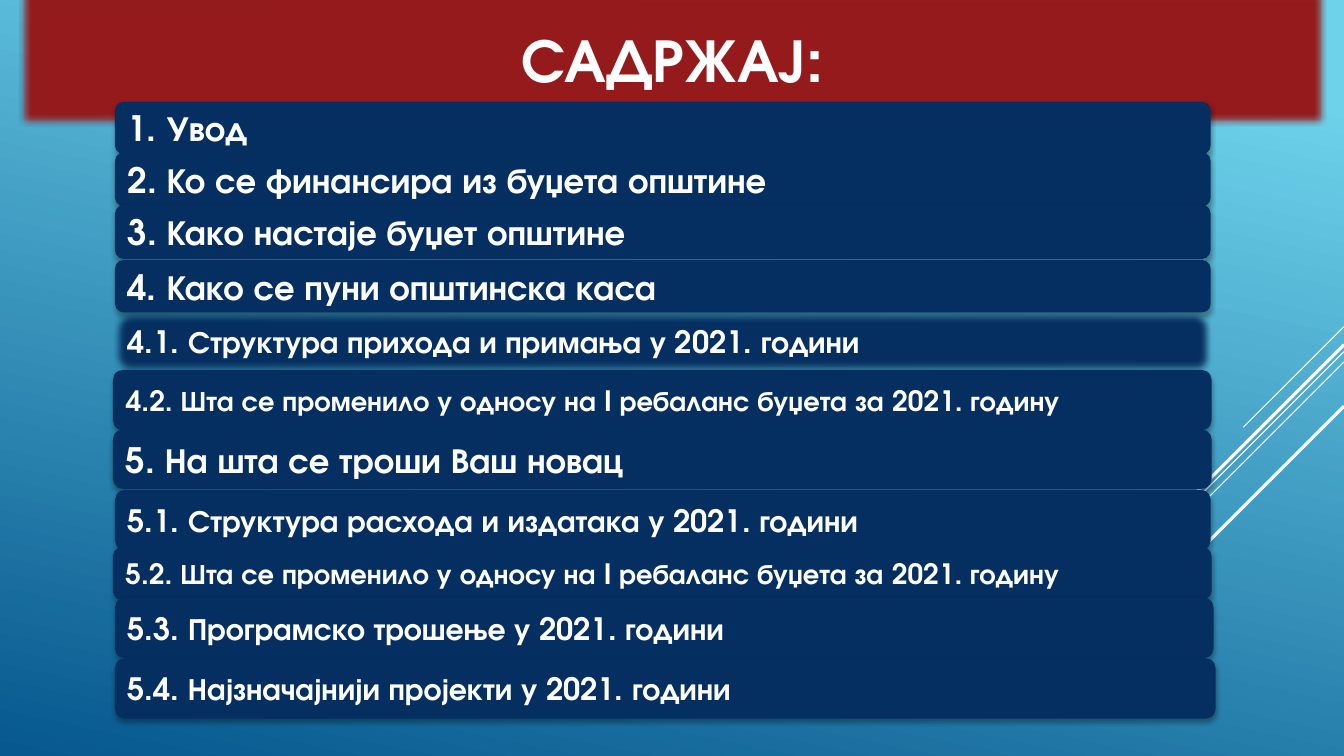
from lxml import etree
from pptx import Presentation, util as u
from pptx.dml.color import RGBColor
from pptx.enum import shapes, text
from pptx.oxml import parse_xml
from pptx.oxml.ns import nsdecls, qn

NAVY = RGBColor(0x05, 0x2F, 0x61)
RED = RGBColor(0x94, 0x1A, 0x1B)
WHITE = RGBColor(0xFF, 0xFF, 0xFF)
SKY = RGBColor(0x6E, 0xD2, 0xEB)
SEA = RGBColor(0x06, 0x58, 0x8E)
FONT = "TeX Gyre Adventor"
MAIN, SUB, LONG = 25, 22, 20

# Start height (% of slide height), run (% of slide width), weight in points
RAYS = [(43.2, 7.5, 0.75), (46.53, 24.45, 0.75), (47.87, 15.56, 0.75),
        (45.6, 14.33, 2.25), (53.73, 10.43, 2.25)]

# Left, top, width, height (% of slide), text size, soft edge, wording
ITEMS = [
    (8.55, 13.47, 81.53, 6.93, MAIN, False, "1. Увод"),
    (8.55, 20.13, 81.53, 7.2, MAIN, False, "2. Ко се финансира из буџета општине"),
    (8.55, 27.07, 81.53, 7.2, MAIN, False, "3. Како настаје буџет општине"),
    (8.55, 34.4, 81.53, 6.93, MAIN, False, "4. Како се пуни општинска каса"),
    (8.55, 41.2, 81.53, 8, SUB, True,
     "4.1. Структура прихода и примања у 2021. години"),
    (8.4, 48.93, 81.75, 8, LONG, False,
     "4.2. Шта се променило у односу на I ребаланс буџета за 2021. годину"),
    (8.4, 56.8, 81.75, 7.87, MAIN, False, "5. На шта се троши Ваш новац"),
    (8.55, 64.8, 81.53, 8, SUB, False,
     "5.1. Структура расхода и издатака у 2021. години"),
    (8.4, 72.4, 81.75, 6.93, LONG, False,
     "5.2. Шта се променило у односу на I ребаланс буџета за 2021. годину"),
    (8.55, 79.07, 81.75, 8, SUB, False, "5.3. Програмско трошење у 2021. години"),
    (8.55, 87.07, 81.9, 8, SUB, False,
     "5.4. Најзначајнији пројекти у 2021. години"),
]


class Deck:
    """Holds the style and the current slide; lengths are % of the slide."""

    def __init__(self):
        self.prs = Presentation()
        self.prs.slide_width = u.Inches(13.33)
        self.prs.slide_height = u.Inches(7.5)
        self.slide = self.prs.slides.add_slide(self.prs.slide_layouts[5])

    def across(self, share):
        return u.Emu(round(self.prs.slide_width * share / 100))

    def down(self, share):
        return u.Emu(round(self.prs.slide_height * share / 100))

    def box(self, left, top, width, height):
        return (self.across(left), self.down(top),
                self.across(width), self.down(height))

    def backdrop(self):
        fill = self.slide.background.fill
        fill.gradient()
        fill.gradient_angle = 258
        for stop, (place, color) in zip(fill.gradient_stops,
                                        [(0.1, SKY), (1, SEA)]):
            stop.position = place
            stop.color.rgb = color

    def label(self, shape, words, size, align):
        frame = shape.text_frame
        frame.text = words
        frame.word_wrap = True
        frame.auto_size = text.MSO_AUTO_SIZE.NONE
        frame.vertical_anchor = text.MSO_ANCHOR.MIDDLE
        par = frame.paragraphs[0]
        par.alignment = align
        font = par.runs[0].font
        font.name, font.size, font.bold = FONT, u.Pt(size), True
        font.color.rgb = WHITE

    def effects(self, shape, shade=False, soft=False):
        shape.shadow.inherit = False
        parts = shape._element.spPr.find(qn("a:effectLst"))
        if shade:
            parts.append(parse_xml(
                f'<a:outerShdw {nsdecls("a")} blurRad="44450" dist="27940" '
                'dir="5400000" algn="ctr" rotWithShape="0">'
                '<a:srgbClr val="000000"><a:alpha val="32000"/></a:srgbClr>'
                '</a:outerShdw>'))
        if soft:
            etree.SubElement(parts, qn("a:softEdge"), rad="63500")

    def title(self, words, *place):
        """Shape the title placeholder as a soft-edged scroll."""
        scroll = self.slide.shapes.title
        scroll.left, scroll.top, scroll.width, scroll.height = self.box(*place)
        scroll._element.spPr.append(parse_xml(
            f'<a:prstGeom {nsdecls("a")} prst="horizontalScroll">'
            '<a:avLst/></a:prstGeom>'))
        scroll.fill.solid()
        scroll.fill.fore_color.rgb = RED
        scroll.line.color.rgb = NAVY
        scroll.line.width = u.Pt(1.25)
        self.effects(scroll, soft=True)
        self.label(scroll, words, 44, text.PP_ALIGN.CENTER)

    def ray(self, top, run, weight):
        """Draw a 45 degree line down and left from the right edge."""
        reach = self.across(run)
        right, start = self.across(100), self.down(top)
        line = self.slide.shapes.add_connector(
            shapes.MSO_CONNECTOR.STRAIGHT,
            right, start, right - reach, start + reach)
        line.line.color.rgb = WHITE
        line.line.width = u.Pt(weight)
        etree.SubElement(line._element.spPr, qn("a:effectLst"))

    def item(self, left, top, width, height, size, soft, words):
        bar = self.slide.shapes.add_shape(
            shapes.MSO_SHAPE.ROUNDED_RECTANGLE,
            *self.box(left, top, width, height))
        bar.fill.solid()
        bar.fill.fore_color.rgb = NAVY
        bar.line.fill.background()
        self.effects(bar, shade=True, soft=soft)
        self.label(bar, words, size, text.PP_ALIGN.LEFT)


def main():
    deck = Deck()
    deck.backdrop()
    for ray in RAYS:
        deck.ray(*ray)
    deck.title("САДРЖАЈ:", 1.43, -1.47, 97.2, 18.13)
    for item in ITEMS:
        deck.item(*item)
    deck.prs.save("out.pptx")


if __name__ == "__main__":
    main()
